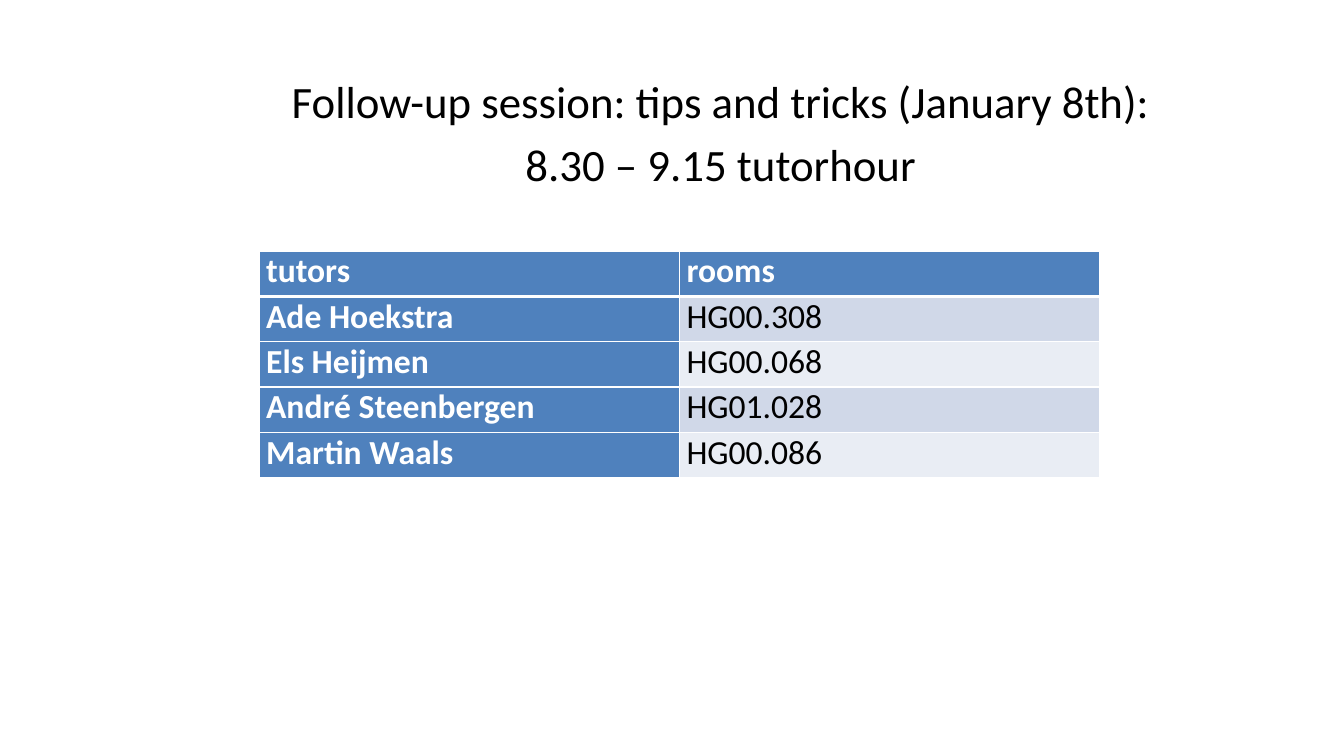
from typing import NamedTuple

from lxml.etree import SubElement
from pptx import Presentation
from pptx.dml.color import RGBColor
from pptx.enum.text import PP_ALIGN
from pptx.oxml.ns import qn
from pptx.slide import Slide
from pptx.table import _Cell
from pptx.text.text import TextFrame
from pptx.util import Inches, Pt

COLORS = {
    "black": "000000",
    "white": "FFFFFF",
    "header": "4F81BD",
    "band_dark": "D0D8E8",
    "band_light": "E9EDF4",
}
FONT = "Calibri"


class Room(NamedTuple):
    tutor: str
    room: str


HEADING = [
    "Follow-up session: tips and tricks (January 8th):",
    "8.30 – 9.15 tutorhour",
]
ROOMS = [
    Room("tutors", "rooms"),
    Room("Ade Hoekstra", "HG00.308"),
    Room("Els Heijmen", "HG00.068"),
    Room("André Steenbergen", "HG01.028"),
    Room("Martin Waals", "HG00.086"),
]


def write(tf: TextFrame, lines: list[str], *, size: float, color: str = "black",
          bold: bool = False, align: PP_ALIGN = PP_ALIGN.LEFT, before: float = 0) -> None:
    for i, line in enumerate(lines):
        p = tf.paragraphs[0] if i == 0 else tf.add_paragraph()
        p.alignment = align
        p.space_before = Pt(before)
        r = p.add_run()
        r.text = line
        r.font.name = FONT
        r.font.size = Pt(size)
        r.font.bold = bold
        r.font.color.rgb = RGBColor.from_string(COLORS[color])


def set_borders(cell: _Cell, *, bottom: float = 1, top: float = 1) -> None:
    """Draw white lines, widths in points, on all four sides; call before filling."""
    tc_pr = cell._tc.get_or_add_tcPr()
    for side, width in (("L", 1), ("R", 1), ("T", top), ("B", bottom)):
        ln = SubElement(tc_pr, qn(f"a:ln{side}"), w=str(Pt(width)))
        fill = SubElement(ln, qn("a:solidFill"))
        SubElement(fill, qn("a:srgbClr"), val=COLORS["white"])


def add_heading(s: Slide) -> None:
    tf = s.shapes.add_textbox(Inches(1.15), Inches(0.68), Inches(12), Inches(4.95)).text_frame
    tf.word_wrap = True
    write(tf, HEADING, size=32, align=PP_ALIGN.CENTER, before=6.4)


def add_rooms_table(s: Slide) -> None:
    row_height = Inches(0.45)
    table = s.shapes.add_table(len(ROOMS), len(Room._fields), Inches(2.57), Inches(2.49),
                               Inches(8.34), row_height * len(ROOMS)).table
    table.first_col = True
    for i, entry in enumerate(ROOMS):
        table.rows[i].height = row_height
        for j, text in enumerate(entry):
            cell = table.cell(i, j)
            is_header = i == 0 or j == 0
            band = "band_dark" if i % 2 else "band_light"
            cell.margin_left = cell.margin_right = Inches(0.07)
            cell.margin_top = cell.margin_bottom = 0
            set_borders(cell, bottom=3 if i == 0 else 1, top=3 if i == 1 else 1)
            cell.fill.solid()
            cell.fill.fore_color.rgb = RGBColor.from_string(COLORS["header" if is_header else band])
            write(cell.text_frame, [text], size=24, bold=is_header,
                  color="white" if is_header else "black")


def main() -> None:
    prs = Presentation()
    prs.slide_width, prs.slide_height = Inches(13.33), Inches(7.5)
    s = prs.slides.add_slide(prs.slide_layouts[6])
    add_heading(s)
    add_rooms_table(s)
    prs.save("out.pptx")


if __name__ == "__main__":
    main()
